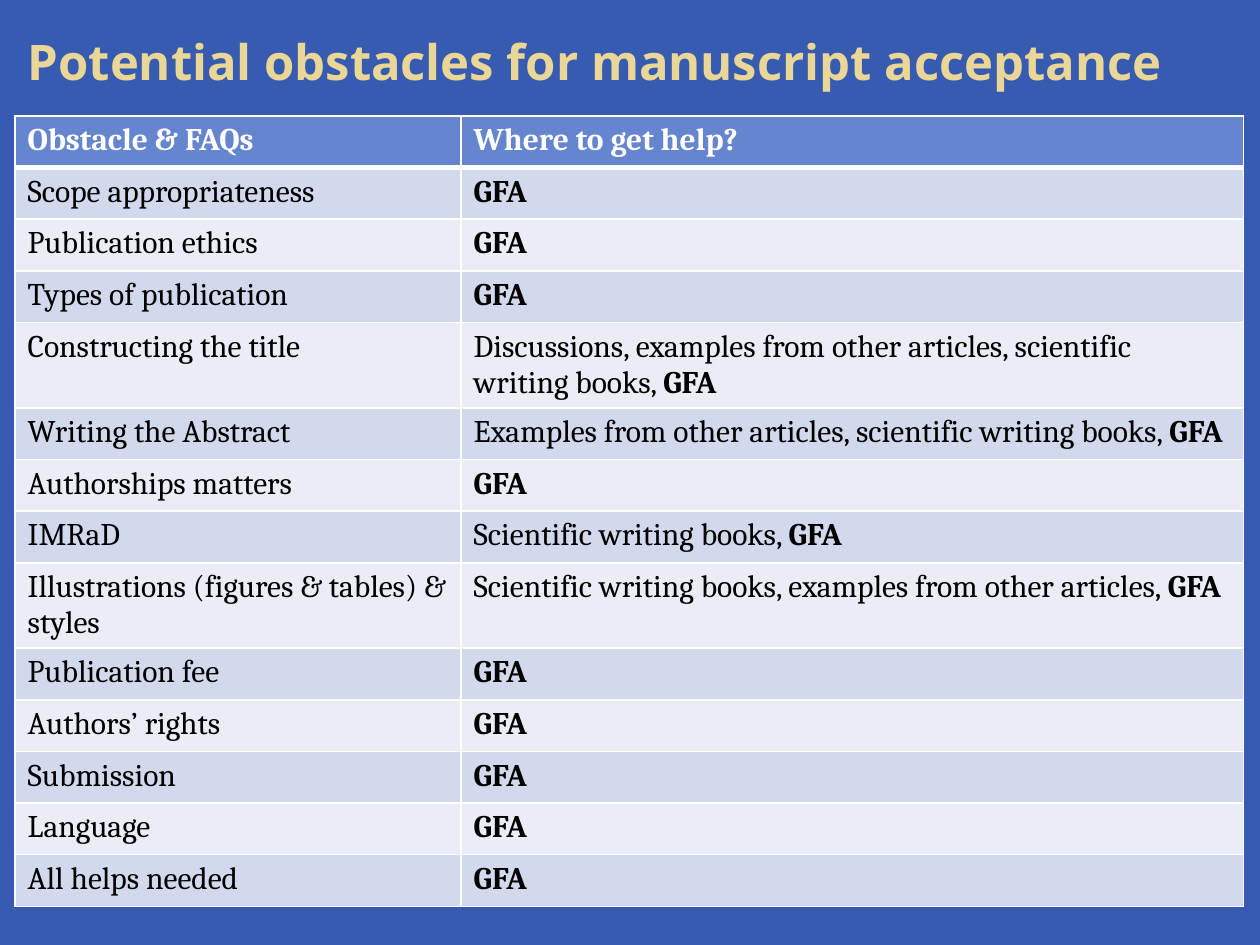
from lxml import etree
from pptx import Presentation
from pptx.dml.color import RGBColor
from pptx.enum import text
from pptx.oxml import ns
from pptx.util import Inches, Pt

COLORS = {
    "background": "375BB0",
    "title": "EAD696",
    "header": "6585CF",
    "odd_row": "D3D9ED",
    "even_row": "EAEDF6",
    "white": "FFFFFF",
    "black": "000000",
}
HELP = "GFA"
HEADER = ("Obstacle & FAQs", "Where to get help?")
OBSTACLES = [
    ("Scope appropriateness", ""),
    ("Publication ethics", ""),
    ("Types of publication", ""),
    ("Constructing the title", "Discussions, examples from other articles, scientific writing books, "),
    ("Writing the Abstract", "Examples from other articles, scientific writing books, "),
    ("Authorships matters", ""),
    ("IMRaD", "Scientific writing books, "),
    ("Illustrations (figures & tables) & styles", "Scientific writing books, examples from other articles, "),
    ("Publication fee", ""),
    ("Authors’ rights", ""),
    ("Submission", ""),
    ("Language", ""),
    ("All helps needed", ""),
]


def rgb(name):
    return RGBColor.from_string(COLORS[name])


def style_run(r, font, size, color, bold):
    r.font.name = font
    r.font.size = Pt(size)
    r.font.bold = bold
    r.font.color.rgb = rgb(color)


def set_borders(cell, color, widths):
    tcPr = cell._tc.get_or_add_tcPr()
    for side, width in widths.items():
        ln = etree.SubElement(tcPr, ns.qn(f"a:ln{side}"), w=str(Pt(width)))
        fill = etree.SubElement(ln, ns.qn("a:solidFill"))
        etree.SubElement(fill, ns.qn("a:srgbClr"), val=COLORS[color])


def fill_cell(cell, parts, fill, color, bottom=1):
    set_borders(cell, "white", {"L": 1, "R": 1, "T": 1, "B": bottom})
    cell.fill.solid()
    cell.fill.fore_color.rgb = rgb(fill)
    p = cell.text_frame.paragraphs[0]
    for words, bold in parts:
        if words:
            r = p.add_run()
            r.text = words
            style_run(r, "Cambria", 18, color, bold)


def add_title(slide, left, top, width, height):
    sp = slide.shapes.title
    sp.left, sp.top, sp.width, sp.height = left, top, width, height
    tf = sp.text_frame
    tf.text = "Potential obstacles for manuscript acceptance"
    tf.word_wrap = True
    tf.auto_size = text.MSO_AUTO_SIZE.NONE
    tf.vertical_anchor = text.MSO_ANCHOR.MIDDLE
    p = tf.paragraphs[0]
    p.alignment = text.PP_ALIGN.LEFT
    style_run(p.runs[0], "Noto Sans", 28, "title", True)


def add_help_table(slide, left, top, width, row_height):
    rows = len(OBSTACLES) + 1
    table = slide.shapes.add_table(rows, 2, left, top, width, row_height * rows).table
    table.columns[0].width = Inches(3.54)
    table.columns[1].width = width - Inches(3.54)
    for row in table.rows:
        row.height = row_height
    for col, heading in enumerate(HEADER):
        fill_cell(table.cell(0, col), [(heading, True)], "header", "white", bottom=3)
    for i, (obstacle, sources) in enumerate(OBSTACLES, start=1):
        fill = "odd_row" if i % 2 else "even_row"
        fill_cell(table.cell(i, 0), [(obstacle, False)], fill, "black", bottom=1)
        fill_cell(table.cell(i, 1), [(sources, False), (HELP, True)], fill, "black")
    for col in range(2):
        top_line = table.cell(1, col)._tc.tcPr.find(ns.qn("a:lnT"))
        top_line.set("w", str(Pt(3)))


def main():
    prs = Presentation()
    prs.slide_width, prs.slide_height = Inches(10), Inches(7.5)
    slide = prs.slides.add_slide(prs.slide_layouts[5])
    slide.background.fill.solid()
    slide.background.fill.fore_color.rgb = rgb("background")
    add_title(slide, Inches(0.12), Inches(0.17), Inches(9.62), Inches(0.62))
    add_help_table(slide, Inches(0.12), Inches(0.92), Inches(9.75), Inches(0.41))
    prs.save("out.pptx")


if __name__ == "__main__":
    main()
